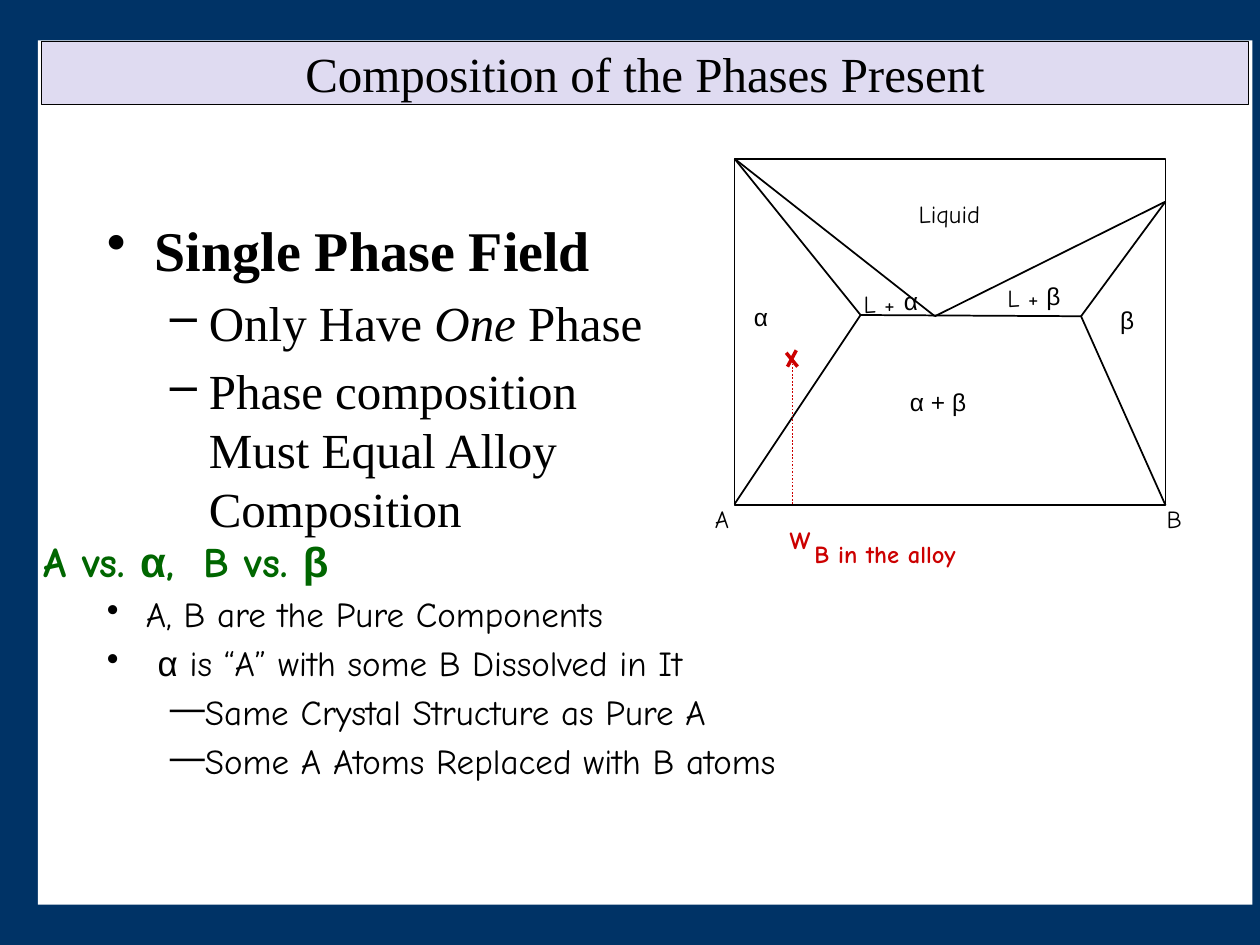
import pptx
import pptx.dml.color
import pptx.enum.dml
import pptx.enum.shapes
import pptx.enum.text
import pptx.oxml
import pptx.oxml.ns
import pptx.util
from pptx.util import Inches

RGBColor = pptx.dml.color.RGBColor
NAVY = RGBColor(0x00, 0x33, 0x66)
WHITE = RGBColor(0xFF, 0xFF, 0xFF)
LAVENDER = RGBColor(0xDF, 0xDB, 0xF1)
BLACK = RGBColor(0x00, 0x00, 0x00)
RED = RGBColor(0xCC, 0x00, 0x00)
GREEN = RGBColor(0x00, 0x66, 0x00)

SERIF, GREEK, COMIC = "Times New Roman", "Arial", "Comic Neue"
CENTER = pptx.enum.text.PP_ALIGN.CENTER

# Corners of the phase diagram
A_MELT, B_MELT = (5.83, 1.26), (9.25, 1.6)
A_BASE, B_BASE = (5.83, 4), (9.25, 4.01)
ALPHA_LIMIT, BETA_LIMIT, EUTECTIC = (6.83, 2.5), (8.58, 2.51), (7.42, 2.51)
BOUNDARIES = [
    (ALPHA_LIMIT, BETA_LIMIT), (ALPHA_LIMIT, A_BASE), (BETA_LIMIT, B_BASE),
    (BETA_LIMIT, B_MELT), (A_MELT, ALPHA_LIMIT), (A_MELT, EUTECTIC),
    (B_MELT, EUTECTIC),
]
ALLOY_CROSS = [((6.24, 2.8), (6.33, 2.91)), ((6.25, 2.91), (6.32, 2.78))]

# Text, left, top, width, height, font
PHASE_LABELS = [
    ("Liquid", 7.27, 1.58, 0.53, 0.23, COMIC),
    ("L +", 7.99, 2.25, 0.26, 0.23, COMIC),
    ("β", 8.25, 2.23, 0.22, 0.28, GREEK),
    ("L +", 6.85, 2.29, 0.26, 0.23, COMIC),
    ("α", 7.17, 2.27, 0.12, 0.23, GREEK),
    ("α", 5.92, 2.4, 0.24, 0.28, GREEK),
    ("β", 8.89, 2.42, 0.11, 0.23, GREEK),
    ("α + β", 7.17, 3.07, 0.55, 0.28, GREEK),
    ("A", 5.66, 4, 0.14, 0.23, COMIC),
    ("B", 9.26, 4, 0.12, 0.23, COMIC),
]
ALLOY_LABELS = [
    ("W", 6.25, 4.17, 0.2, 0.23, COMIC),
    ("B in the alloy", 6.39, 4.28, 1.27, 0.23, COMIC),
]

HEADING = {"size": 32, "name": SERIF, "bold": True}
POINT = {"size": 28, "name": SERIF}
LEAD = {"size": 24, "name": COMIC, "bold": True, "color": GREEN}
LEAD_GREEK = {**LEAD, "name": GREEK}
NOTE = {"size": 20, "name": COMIC}
NOTE_GREEK = {**NOTE, "name": GREEK}

# Level, margin, indent, bullet, runs
SINGLE_PHASE = [
    (0, 0.38, -0.38, "•", [("Single Phase Field", HEADING)]),
    (1, 0.81, -0.31, "–", [("Only Have ", POINT),
                           ("One", {**POINT, "italic": True}),
                           (" Phase", POINT)]),
    (1, 0.81, -0.31, "–",
     [("Phase composition Must Equal Alloy Composition", POINT)]),
]
COMPONENTS_VS_PHASES = [
    (0, 0.38, -0.38, None, [("A vs. ", LEAD), ("α", LEAD_GREEK),
                            (",  B vs. ", LEAD), ("β", LEAD_GREEK)]),
    (1, 0.81, -0.31, "•", [("A, B are the Pure Components", NOTE)]),
    (1, 0.81, -0.31, "•", [(" ", NOTE), ("α", NOTE_GREEK),
                           (" is “A” with some B Dissolved in It", NOTE)]),
    (2, 1.25, -0.25, "—", [("Same Crystal Structure as Pure A", NOTE)]),
    (2, 1.25, -0.25, "—", [("Some A Atoms Replaced with B atoms", NOTE)]),
]


def add_panel(slide, box, fill, line_width=None):
    panel = slide.shapes.add_shape(
        pptx.enum.shapes.MSO_SHAPE.RECTANGLE, *map(Inches, box))
    panel.shadow.inherit = False
    panel.fill.solid()
    panel.fill.fore_color.rgb = fill
    if line_width:
        panel.line.color.rgb = BLACK
        panel.line.width = pptx.util.Pt(line_width)
    else:
        panel.line.fill.background()
    return panel


def add_line(slide, start, end, color=BLACK, width=1, dash=None):
    line = slide.shapes.add_connector(
        pptx.enum.shapes.MSO_CONNECTOR.STRAIGHT,
        *map(Inches, (*start, *end)))
    line.line.color.rgb = color
    line.line.width = pptx.util.Pt(width)
    if dash:
        line.line.dash_style = dash
    line._element.spPr.append(pptx.oxml.parse_xml(
        f'<a:effectLst {pptx.oxml.ns.nsdecls("a")}/>'))


def add_run(paragraph, text, style):
    run = paragraph.add_run()
    run.text = text
    values = {**style, "size": pptx.util.Pt(style["size"])}
    run.font.color.rgb = values.pop("color", BLACK)
    for attribute, value in values.items():
        setattr(run.font, attribute, value)


def add_label(slide, text, left, top, width, height, font, **style):
    label = slide.shapes.add_textbox(
        *map(Inches, (left, top, width, height)))
    frame = label.text_frame
    frame_format = {
        "margin_left": 0, "margin_top": 0, "margin_right": 0,
        "margin_bottom": 0, "word_wrap": False,
        "auto_size": pptx.enum.text.MSO_AUTO_SIZE.SHAPE_TO_FIT_TEXT,
    }
    for attribute, value in frame_format.items():
        setattr(frame, attribute, value)
    frame.paragraphs[0].alignment = CENTER
    add_run(frame.paragraphs[0], text, {"size": 14, "name": font, **style})


def set_bullet(paragraph, margin, indent, bullet):
    properties = paragraph._p.get_or_add_pPr()
    properties.set("marL", str(Inches(margin)))
    properties.set("indent", str(Inches(indent)))
    tag = f'buChar char="{bullet}"' if bullet else "buNone"
    properties.append(pptx.oxml.parse_xml(
        f'<a:{tag} {pptx.oxml.ns.nsdecls("a")}/>'))


def fill_outline(frame, items):
    """Write the items as an indented, bulleted list."""
    frame.word_wrap = True
    frame.vertical_anchor = pptx.enum.text.MSO_ANCHOR.TOP
    for index, (level, margin, indent, bullet, runs) in enumerate(items):
        paragraph = frame.add_paragraph() if index else frame.paragraphs[0]
        paragraph.level = level
        paragraph.alignment = pptx.enum.text.PP_ALIGN.LEFT
        paragraph.space_before = pptx.util.Pt(0.2 * runs[0][1]["size"])
        if not bullet:
            paragraph.line_spacing = 1.3
        set_bullet(paragraph, margin, indent, bullet)
        for text, style in runs:
            add_run(paragraph, text, style)


def add_phase_diagram(slide):
    add_panel(slide, (*A_MELT, 3.42, 2.75), WHITE, 1)
    for start, end in BOUNDARIES:
        add_line(slide, start, end)
    for label in PHASE_LABELS:
        add_label(slide, *label)
    for start, end in ALLOY_CROSS:
        add_line(slide, start, end, RED, 2)
    add_line(slide, (6.29, 2.83), (6.29, 4), RED,
             dash=pptx.enum.dml.MSO_LINE.ROUND_DOT)
    for label in ALLOY_LABELS:
        add_label(slide, *label, bold=True, color=RED)


def main():
    presentation = pptx.Presentation()
    presentation.slide_width = Inches(10)
    presentation.slide_height = Inches(7.5)
    slide = presentation.slides.add_slide(presentation.slide_layouts[6])
    slide.background.fill.solid()
    slide.background.fill.fore_color.rgb = NAVY

    add_panel(slide, (0.3, 0.32, 9.64, 6.86), WHITE)
    title = add_panel(slide, (0.33, 0.33, 9.58, 0.5), LAVENDER, 0.75)
    title_frame = title.text_frame
    title_frame.vertical_anchor = pptx.enum.text.MSO_ANCHOR.MIDDLE
    title_frame.paragraphs[0].alignment = CENTER
    add_run(title_frame.paragraphs[0],
            "Composition of the Phases Present", POINT)

    single_phase = add_panel(slide, (0.75, 1.66, 4.53, 2.06), WHITE)
    fill_outline(single_phase.text_frame, SINGLE_PHASE)
    add_phase_diagram(slide)
    components = slide.shapes.add_textbox(
        *map(Inches, (0.25, 4.08, 9.5, 2.25)))
    fill_outline(components.text_frame, COMPONENTS_VS_PHASES)

    presentation.save("out.pptx")


if __name__ == "__main__":
    main()
